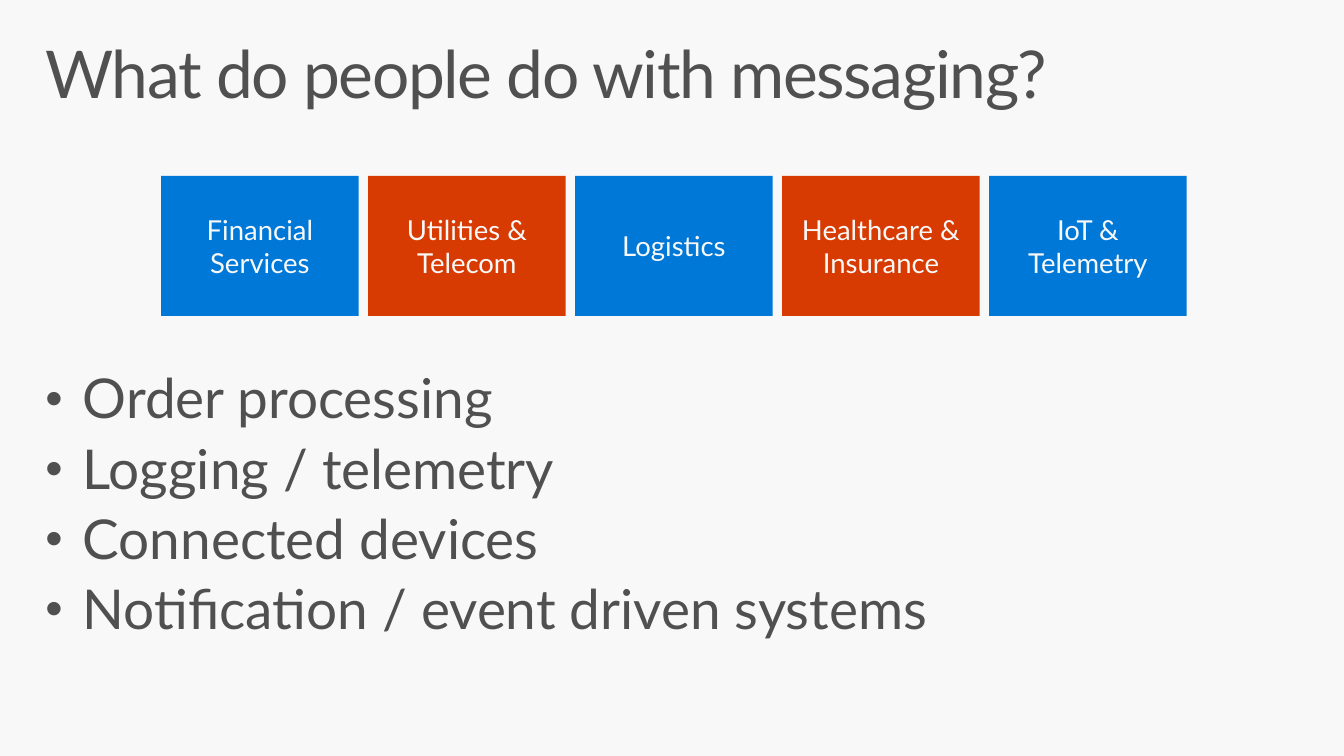
"""Build a slide on what people do with messaging."""
from lxml.etree import SubElement
from pptx import Presentation
from pptx.dml.color import RGBColor
from pptx.enum.shapes import MSO_SHAPE
from pptx.enum.text import MSO_ANCHOR, PP_ALIGN
from pptx.oxml.ns import qn
from pptx.util import Cm, Pt


def rgb(value):
    return RGBColor.from_string(value)


def write(sp, text, size, color, insets):
    tf = sp.text_frame
    tf.word_wrap = True
    tf.margin_left = tf.margin_right = Cm(insets[0])
    tf.margin_top = tf.margin_bottom = Cm(insets[1])
    tf.text = text
    for p in tf.paragraphs:
        for r in p.runs:
            r.font.name = "Lato"
            r.font.size = Pt(size)
            r.font.color.rgb = rgb(color)
    return tf


prs = Presentation()
prs.slide_width = Cm(34.54)
prs.slide_height = Cm(19.43)
s = prs.slides.add_slide(prs.slide_layouts[6])
s.background.fill.solid()
s.background.fill.fore_color.rgb = rgb("F8F8F8")

title = s.shapes.add_textbox(Cm(0.76), Cm(0.81), Cm(33.02), Cm(2.54))
tf = write(title, "What do people do with messaging?", 48, "505050", (0.41, 0.25))
p = tf.paragraphs[0]
p.line_spacing = 0.9
p.runs[0].font._element.set("spc", "-100")

industries = [
    "Financial Services",
    "Utilities & Telecom",
    "Logistics",
    "Healthcare &\nInsurance",
    "IoT &\nTelemetry",
]
for i, industry in enumerate(industries):
    sp = s.shapes.add_shape(
        MSO_SHAPE.RECTANGLE, Cm(4.14 + i * 5.32), Cm(4.52), Cm(5.08), Cm(3.6))
    sp.shadow.inherit = False
    sp.fill.solid()
    sp.fill.fore_color.rgb = rgb(("0078D7", "D83B01")[i % 2])
    sp.line.fill.background()
    tf = write(sp, industry, 20, "F8F8F8", (0, 0.13))
    tf.vertical_anchor = MSO_ANCHOR.MIDDLE
    for p in tf.paragraphs:
        p.alignment = PP_ALIGN.CENTER

uses = [
    "Order processing",
    "Logging / telemetry",
    "Connected devices",
    "Notification / event driven systems",
]
body = s.shapes.add_textbox(Cm(0.76), Cm(9.3), Cm(33.02), Cm(9.58))
tf = write(body, "\n".join(uses), 40, "505050", (0.41, 0.25))
for p in tf.paragraphs:
    p.line_spacing = 0.9
    p.space_before = Pt(8)
    pPr = p._p.get_or_add_pPr()
    pPr.set("marL", str(Cm(0.96)))
    pPr.set("indent", str(Cm(-0.96)))
    SubElement(pPr, qn("a:buSzPct")).set("val", "90000")
    SubElement(pPr, qn("a:buFont")).set("typeface", "Arial")
    SubElement(pPr, qn("a:buChar")).set("char", "•")

prs.save("out.pptx")
